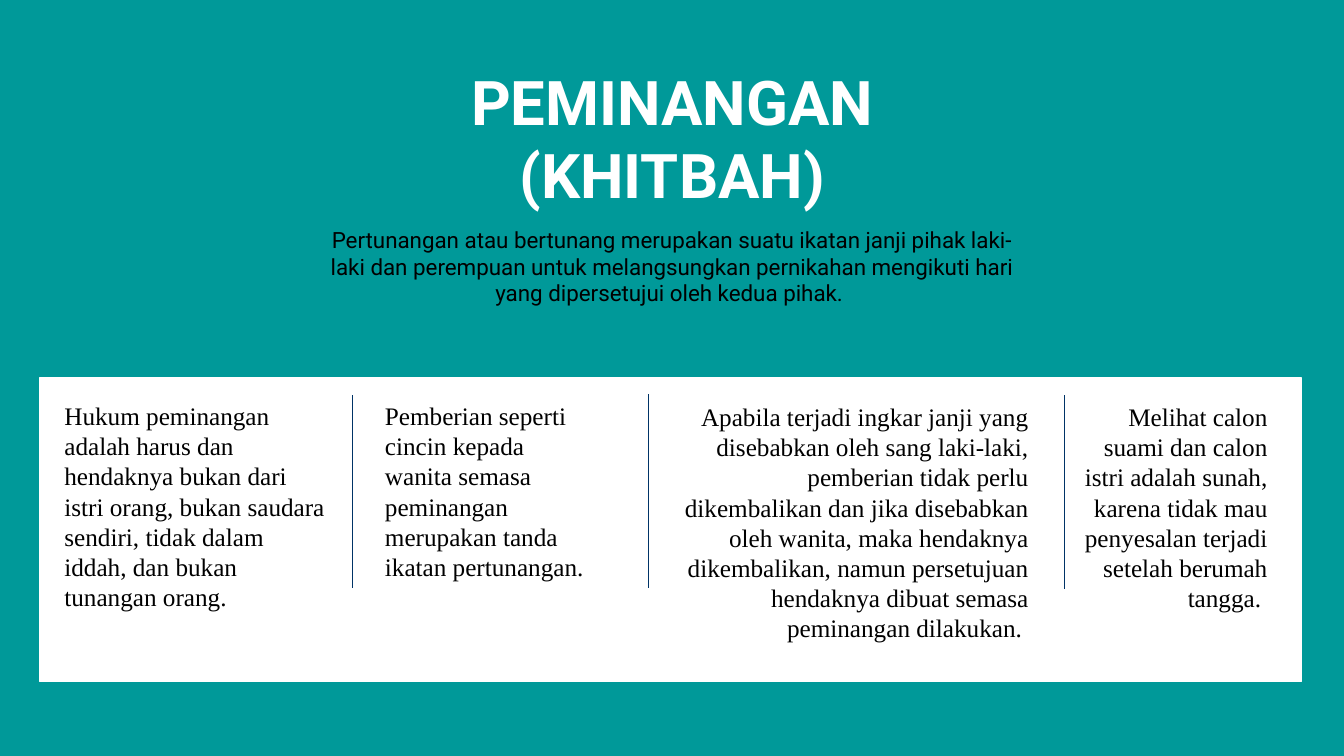
"""Builds the slide on proposal and engagement (khitbah)."""
from dataclasses import dataclass

from lxml import etree
from pptx import Presentation
from pptx.dml.color import RGBColor
from pptx.enum.shapes import MSO_CONNECTOR, MSO_SHAPE
from pptx.enum.text import MSO_ANCHOR, MSO_AUTO_SIZE, PP_ALIGN
from pptx.oxml.ns import qn
from pptx.util import Inches, Pt


@dataclass(frozen=True)
class Theme:
    """Colours, fonts and type sizes of the slide."""
    teal: RGBColor = RGBColor(0x00, 0x99, 0x99)
    white: RGBColor = RGBColor(0xFF, 0xFF, 0xFF)
    black: RGBColor = RGBColor(0x00, 0x00, 0x00)
    navy: RGBColor = RGBColor(0x00, 0x33, 0x66)
    heading_font: str = "Roboto"
    column_font: str = "Times New Roman"
    title_size: int = 44
    definition_size: int = 16
    column_size: int = 18


class SlideBuilder:
    """Holds the theme and the current slide and draws each kind of element."""

    def __init__(self, slide, theme):
        """Keep the slide and theme and colour the background."""
        self.slide = slide
        self.theme = theme
        slide.background.fill.solid()
        slide.background.fill.fore_color.rgb = theme.teal

    def set_text(self, shape, text, font, size, color, align, bold=False):
        """Fill a text shape with one formatted paragraph."""
        frame = shape.text_frame
        frame.text = text
        frame.word_wrap = True
        frame.auto_size = MSO_AUTO_SIZE.SHAPE_TO_FIT_TEXT
        frame.vertical_anchor = MSO_ANCHOR.TOP
        paragraph = frame.paragraphs[0]
        paragraph.alignment = align
        paragraph.space_before = Pt(0)
        for run in paragraph.runs:
            run.font.name = font
            run.font.size = Pt(size)
            run.font.bold = bold
            run.font.color.rgb = color

    def heading(self, index, box, text, size, color, bold=False):
        """Move a template placeholder and put centred text in it."""
        holder = self.slide.placeholders[index]
        holder.left, holder.top, holder.width, holder.height = map(Inches, box)
        self.set_text(holder, text, self.theme.heading_font, size, color,
                      PP_ALIGN.CENTER, bold)

    def panel(self, box):
        """Draw the white panel behind the columns."""
        panel = self.slide.shapes.add_shape(MSO_SHAPE.RECTANGLE, *map(Inches, box))
        panel.shadow.inherit = False
        panel.fill.solid()
        panel.fill.fore_color.rgb = self.theme.white
        panel.line.color.rgb = self.theme.white
        panel.line.width = Pt(1)

    def column(self, box, text, align):
        """Add one column of text."""
        column = self.slide.shapes.add_textbox(*map(Inches, box))
        self.set_text(column, text, self.theme.column_font,
                      self.theme.column_size, self.theme.black, align)

    def divider(self, x, top, bottom):
        """Draw a thin vertical line between two columns."""
        divider = self.slide.shapes.add_connector(
            MSO_CONNECTOR.STRAIGHT, *map(Inches, (x, top, x, bottom)))
        divider.line.color.rgb = self.theme.navy
        divider.line.width = Pt(0.5)
        etree.SubElement(divider._element.spPr, qn("a:effectLst"))


COLUMNS = [
    ((0.54, 3.92, 2.79, 2.22), PP_ALIGN.LEFT,
     "Hukum peminangan adalah harus dan hendaknya bukan dari istri orang, "
     "bukan saudara sendiri, tidak dalam iddah, dan bukan tunangan orang."),
    ((3.72, 3.92, 2.24, 1.92), PP_ALIGN.LEFT,
     "Pemberian seperti cincin kepada wanita semasa peminangan merupakan "
     "tanda ikatan pertunangan."),
    ((6.67, 3.93, 3.63, 2.52), PP_ALIGN.RIGHT,
     "Apabila terjadi ingkar janji yang disebabkan oleh sang laki-laki, "
     "pemberian tidak perlu dikembalikan dan jika disebabkan oleh wanita, "
     "maka hendaknya dikembalikan, namun persetujuan hendaknya dibuat semasa "
     "peminangan dilakukan. "),
    ((10.56, 3.93, 2.11, 2.22), PP_ALIGN.RIGHT,
     "Melihat calon suami dan calon istri adalah sunah, karena tidak mau "
     "penyesalan terjadi setelah berumah tangga. "),
]
DIVIDERS = [(3.49, 3.92, 5.83), (6.43, 3.91, 5.83), (10.56, 3.92, 5.84)]


def main():
    """Build and save the slide."""
    deck = Presentation()
    deck.slide_width, deck.slide_height = Inches(13.33), Inches(7.5)
    theme = Theme()
    builder = SlideBuilder(deck.slides.add_slide(deck.slide_layouts[0]), theme)
    builder.heading(0, (3.72, 0.58, 5.9, 1.58), "PEMINANGAN (KHITBAH)",
                    theme.title_size, theme.white, bold=True)
    builder.heading(1, (3.03, 2.19, 7.27, 0.91),
                    "Pertunangan atau bertunang merupakan suatu ikatan janji pihak "
                    "laki-laki dan perempuan untuk melangsungkan pernikahan mengikuti "
                    "hari yang dipersetujui oleh kedua pihak. ",
                    theme.definition_size, theme.black)
    builder.panel((0.39, 3.75, 12.52, 3.01))
    for box, align, text in COLUMNS:
        builder.column(box, text, align)
    for x, top, bottom in DIVIDERS:
        builder.divider(x, top, bottom)
    deck.save("out.pptx")


if __name__ == "__main__":
    main()
